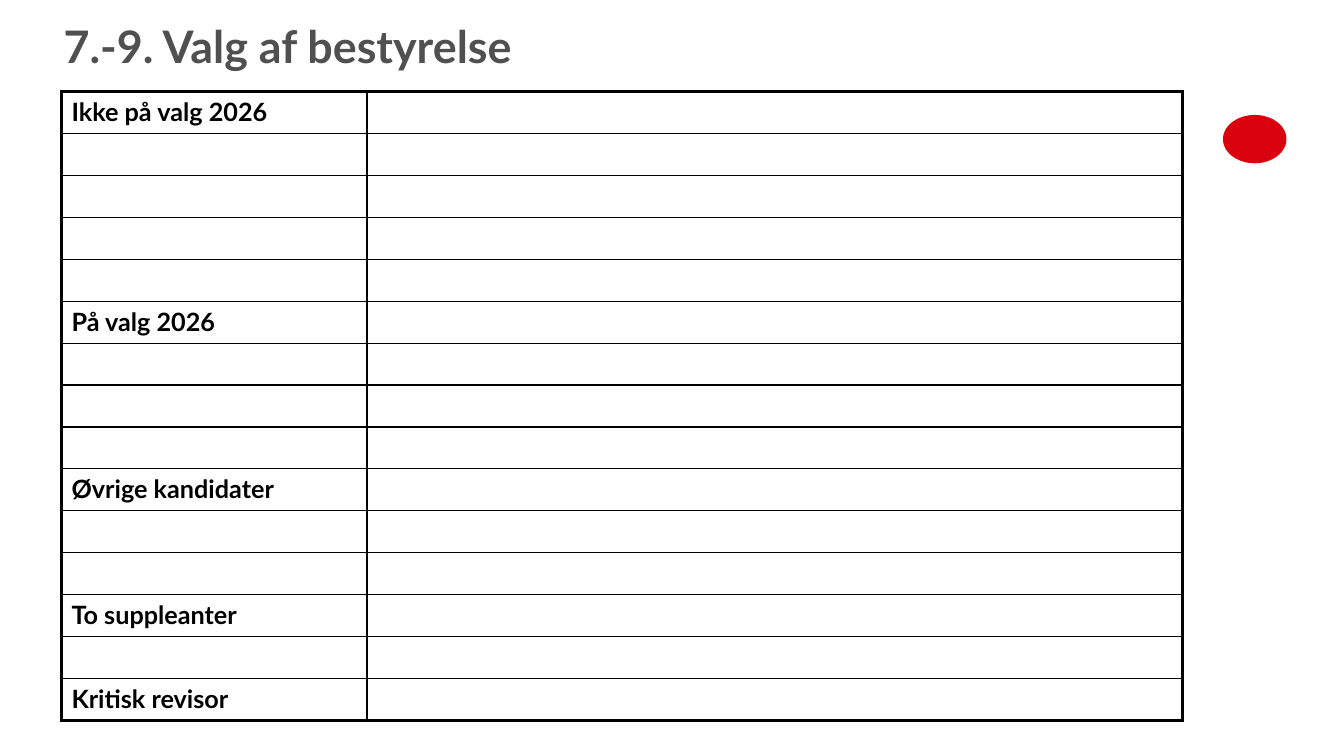
from lxml.etree import SubElement
from pptx import Presentation
from pptx.dml.color import RGBColor
from pptx.enum.shapes import MSO_SHAPE
from pptx.enum.text import MSO_ANCHOR, PP_ALIGN
from pptx.oxml.ns import qn
from pptx.util import Inches, Pt

FONT = "Lato"
BLACK = "000000"
GREY = "505050"
RED = "DA020E"
THIN, THICK = 1, 2.25
ROW_COUNT = 15
ROW_HEIGHT = 6.24 / ROW_COUNT
COLUMN_WIDTHS = (3.03, 8.09)
HEADINGS = {
    0: "Ikke på valg 2026",
    5: "På valg 2026",
    9: "Øvrige kandidater",
    12: "To suppleanter",
    14: "Kritisk revisor",
}


def color(value):
    return RGBColor.from_string(value)


def format_runs(para, size, value):
    for span in para.runs:
        span.font.name = FONT
        span.font.size = Pt(size)
        span.font.bold = True
        span.font.color.rgb = color(value)


def add_title(page, text):
    title = page.shapes.title
    title.left, title.top = Inches(0.63), Inches(0.09)
    title.width, title.height = Inches(8.5), Inches(0.63)
    frame = title.text_frame
    frame.text = text
    frame.word_wrap = True
    frame.vertical_anchor = MSO_ANCHOR.BOTTOM
    frame.margin_left = frame.margin_right = 0
    frame.margin_top = frame.margin_bottom = 0
    para = frame.paragraphs[0]
    para.alignment = PP_ALIGN.LEFT
    para.line_spacing = Pt(36)
    format_runs(para, 32, GREY)


def set_borders(cell, widths):
    properties = cell._tc.get_or_add_tcPr()
    for side, width in widths.items():
        line = SubElement(properties, qn(f"a:ln{side}"), w=str(Pt(width)))
        fill = SubElement(line, qn("a:solidFill"))
        SubElement(fill, qn("a:srgbClr"), val=BLACK)


def add_board_table(page):
    frame = page.shapes.add_table(
        ROW_COUNT, len(COLUMN_WIDTHS), Inches(0.61), Inches(0.91),
        Inches(sum(COLUMN_WIDTHS)), Inches(ROW_HEIGHT * ROW_COUNT))
    table = frame.table
    table.first_row = table.horz_banding = False
    for column, width in zip(table.columns, COLUMN_WIDTHS):
        column.width = Inches(width)
    last_row, last_column = ROW_COUNT - 1, len(COLUMN_WIDTHS) - 1
    for row_index, row in enumerate(table.rows):
        row.height = Inches(ROW_HEIGHT)
        for column_index, cell in enumerate(row.cells):
            set_borders(cell, {
                "L": THICK if column_index == 0 else THIN,
                "R": THICK if column_index == last_column else THIN,
                "T": THICK if row_index == 0 else THIN,
                "B": THICK if row_index == last_row else THIN,
            })
            cell.fill.background()
    for row_index, heading in HEADINGS.items():
        para = table.cell(row_index, 0).text_frame.paragraphs[0]
        para.text = heading
        format_runs(para, 18, BLACK)


def add_emblem(page):
    emblem = page.shapes.add_shape(
        MSO_SHAPE.OVAL, Inches(12.13), Inches(1.14), Inches(0.63), Inches(0.48))
    emblem.shadow.inherit = False
    emblem.fill.solid()
    emblem.fill.fore_color.rgb = color(RED)
    emblem.line.fill.background()


def main():
    deck = Presentation()
    deck.slide_width, deck.slide_height = Inches(13.33), Inches(7.5)
    page = deck.slides.add_slide(deck.slide_layouts.get_by_name("Title Only"))
    add_emblem(page)
    add_title(page, "7.-9. Valg af bestyrelse")
    add_board_table(page)
    deck.save("out.pptx")


if __name__ == "__main__":
    main()
